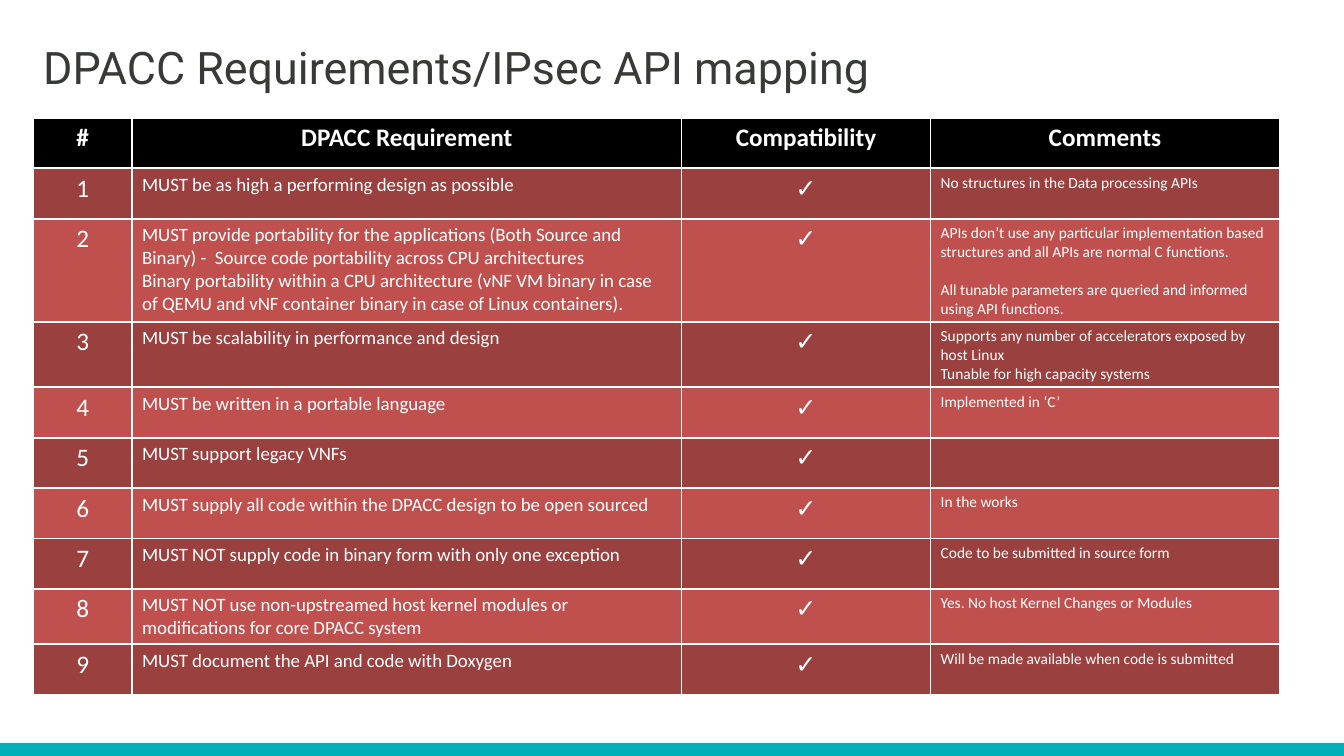
from dataclasses import dataclass

from lxml.etree import SubElement
from pptx import Presentation
from pptx.dml.color import RGBColor
from pptx.enum.shapes import MSO_SHAPE
from pptx.enum.text import MSO_ANCHOR, PP_ALIGN
from pptx.oxml.ns import qn
from pptx.util import Inches, Pt


@dataclass(frozen=True)
class Theme:
    """Colours, fonts and type sizes of the slide."""
    title_font: str = "Roboto"
    table_font: str = "Calibri"
    title_color: str = "373A36"
    white: str = "FFFFFF"
    header_fill: str = "000000"
    row_fills: tuple = ("9A403E", "C0504D")
    bar_fill: str = "00B0B9"
    title_size: float = 32
    large_size: float = 18
    requirement_size: float = 13.5
    comment_size: float = 11
    comment_gap: float = 13.5
    border_width: float = 1.5


THEME = Theme()
CHECK = "✓"
HEADERS = ("#", "DPACC Requirement", "Compatibility", "Comments")
COLUMN_WIDTHS = (0.98, 5.45, 2.47, 3.46)
ROW_HEIGHTS = (0.5, 0.5, 1.02, 0.65, 0.5, 0.5, 0.5, 0.5, 0.55, 0.5)
GAPPED_ROW = 2
REQUIREMENTS = (
    (["MUST be as high a performing design as possible"],
     ["No structures in the Data processing APIs"]),
    (["MUST provide portability for the applications (Both Source and Binary) -  "
      "Source code portability across CPU architectures",
      "Binary portability within a CPU architecture (vNF VM binary in case of QEMU "
      "and vNF container binary in case of Linux containers)."],
     ["APIs don’t use any particular implementation based structures and all APIs "
      "are normal C functions.",
      "All tunable parameters are queried and informed using API functions."]),
    (["MUST be scalability in performance and design"],
     ["Supports any number of accelerators exposed by host Linux",
      "Tunable for high capacity systems"]),
    (["MUST be written in a portable language"], ["Implemented in ‘C’"]),
    (["MUST support legacy VNFs"], []),
    (["MUST supply all code within the DPACC design to be open sourced"],
     ["In the works"]),
    (["MUST NOT supply code in binary form with only one exception"],
     ["Code to be submitted in source form"]),
    (["MUST NOT use non-upstreamed host kernel modules or modifications for core "
      "DPACC system"],
     ["Yes. No host Kernel Changes or Modules"]),
    (["MUST document the API and code with Doxygen"],
     ["Will be made available when code is submitted"]),
)


def add_run(paragraph, text, font_name, size, color, bold=False):
    """Append one styled run to a paragraph."""
    run = paragraph.add_run()
    run.text = text
    run.font.name = font_name
    run.font.size = Pt(size)
    run.font.bold = bold
    run.font.color.rgb = RGBColor.from_string(color)


def add_title(slide, text):
    """Add the slide title."""
    shape = slide.shapes.add_textbox(Inches(0.33), Inches(0.3), Inches(12.75), Inches(0.72))
    frame = shape.text_frame
    frame.word_wrap = True
    frame.vertical_anchor = MSO_ANCHOR.MIDDLE
    add_run(frame.paragraphs[0], text, THEME.title_font, THEME.title_size, THEME.title_color)


def add_bottom_bar(slide):
    """Add the coloured bar along the bottom edge."""
    shape = slide.shapes.add_shape(
        MSO_SHAPE.RECTANGLE, 0, Inches(7.37), Inches(13.33), Inches(0.13))
    shape.shadow.inherit = False
    shape.fill.solid()
    shape.fill.fore_color.rgb = RGBColor.from_string(THEME.bar_fill)
    shape.line.fill.background()


def style_cell(cell, fill):
    """Fill a cell and draw its four borders."""
    properties = cell._tc.get_or_add_tcPr()
    for side in ("a:lnL", "a:lnR", "a:lnT", "a:lnB"):
        line = SubElement(properties, qn(side), w=str(Pt(THEME.border_width)))
        line_fill = SubElement(line, qn("a:solidFill"))
        SubElement(line_fill, qn("a:srgbClr"), val=THEME.white)
    cell.fill.solid()
    cell.fill.fore_color.rgb = RGBColor.from_string(fill)


def write_cell(cell, lines, size, centered=False, bold=False, gap=0):
    """Write one paragraph per line, with a gap between paragraphs."""
    frame = cell.text_frame
    for index, line in enumerate(lines):
        paragraph = frame.add_paragraph() if index else frame.paragraphs[0]
        paragraph.alignment = PP_ALIGN.CENTER if centered else PP_ALIGN.LEFT
        if index and gap:
            paragraph.space_before = Pt(gap)
        add_run(paragraph, line, THEME.table_font, size, THEME.white, bold)


def add_requirements_table(slide):
    """Add the table that maps requirements to the API."""
    table = slide.shapes.add_table(
        len(ROW_HEIGHTS), len(COLUMN_WIDTHS), Inches(0.33), Inches(1.17),
        Inches(sum(COLUMN_WIDTHS)), Inches(sum(ROW_HEIGHTS))).table
    for column, width in zip(table.columns, COLUMN_WIDTHS):
        column.width = Inches(width)
    for index, (row, height) in enumerate(zip(table.rows, ROW_HEIGHTS)):
        row.height = Inches(height)
        fill = THEME.row_fills[(index - 1) % 2] if index else THEME.header_fill
        for cell in row.cells:
            style_cell(cell, fill)
    for cell, header in zip(table.rows[0].cells, HEADERS):
        write_cell(cell, [header], THEME.large_size, centered=True, bold=True)
    for number, (requirement, comments) in enumerate(REQUIREMENTS, start=1):
        gap = THEME.comment_gap if number == GAPPED_ROW else 0
        write_cell(table.cell(number, 0), [str(number)], THEME.large_size, centered=True)
        write_cell(table.cell(number, 1), requirement, THEME.requirement_size)
        write_cell(table.cell(number, 2), [CHECK], THEME.large_size, centered=True)
        write_cell(table.cell(number, 3), comments, THEME.comment_size, gap=gap)


def main():
    """Build and save the slide."""
    presentation = Presentation()
    presentation.slide_width = Inches(13.33)
    presentation.slide_height = Inches(7.5)
    slide = presentation.slides.add_slide(presentation.slide_layouts[6])
    add_bottom_bar(slide)
    add_title(slide, "DPACC Requirements/IPsec API mapping")
    add_requirements_table(slide)
    presentation.save("out.pptx")


if __name__ == "__main__":
    main()
